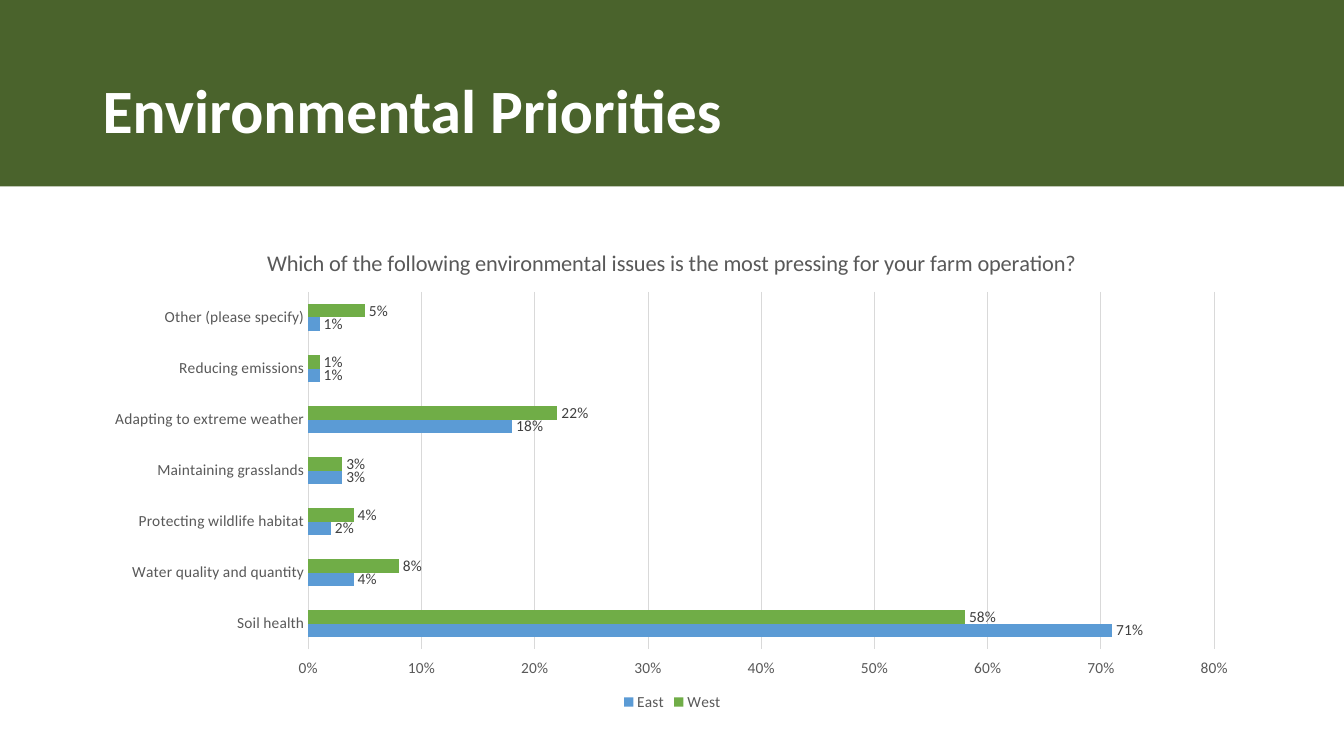
from dataclasses import dataclass

from lxml.etree import SubElement
from pptx import Presentation
from pptx.chart.data import CategoryChartData as ChartData
from pptx.dml.color import RGBColor
from pptx.enum.chart import (
    XL_CHART_TYPE as ChartType,
    XL_LABEL_POSITION as LabelPosition,
    XL_LEGEND_POSITION as LegendPosition,
    XL_TICK_LABEL_POSITION as TickLabelPosition,
    XL_TICK_MARK as TickMark,
)
from pptx.enum.shapes import MSO_SHAPE as Shape
from pptx.enum.text import MSO_ANCHOR as Anchor
from pptx.oxml.ns import qn
from pptx.util import Cm, Pt


@dataclass(frozen=True)
class Theme:
    font: str = "Calibri"
    banner: str = "4A632C"
    heading: str = "FFFFFF"
    muted: str = "595959"
    label: str = "404040"
    grid: str = "D9D9D9"
    west: str = "70AD47"
    east: str = "5B9BD5"
    heading_size: int = 44
    question_size: int = 16
    chart_size: int = 11


THEME = Theme()
SLIDE_WIDTH, SLIDE_HEIGHT = 33.87, 19.05
MARGIN, CONTENT_WIDTH = 2.34, 29.21

QUESTION = ("Which of the following environmental issues is the most "
            "pressing for your farm operation?")
# Issue: (West share, East share)
SHARES = {
    "Other (please specify)": (0.05, 0.01),
    "Reducing emissions": (0.01, 0.01),
    "Adapting to extreme weather": (0.22, 0.18),
    "Maintaining grasslands": (0.03, 0.03),
    "Protecting wildlife habitat": (0.04, 0.02),
    "Water quality and quantity": (0.08, 0.04),
    "Soil health": (0.58, 0.71),
}


def style_font(font, size, color, bold=False):
    font.name = THEME.font
    font.size = Pt(size)
    font.bold = bold
    font.color.rgb = RGBColor.from_string(color)


def write(frame, text, size, color, bold=False, line_spacing=None):
    para = frame.paragraphs[0]
    para.line_spacing = line_spacing
    span = para.add_run()
    span.text = text
    style_font(span.font, size, color, bold)


def style_line(line, color):
    line.color.rgb = RGBColor.from_string(color)
    line.width = Pt(0.75)


def place(element, **settings):
    """Give a chart part a manual layout, in fractions of the chart."""
    layout = element.find(qn("c:layout"))
    if layout is None:
        layout = SubElement(element, qn("c:layout"))
        # The layout follows the title text, or opens the plot area
        text = element.find(qn("c:tx"))
        element.insert(0 if text is None else 1, layout)
    manual = SubElement(layout, qn("c:manualLayout"))
    for name, value in settings.items():
        SubElement(manual, qn(f"c:{name}")).set("val", str(value))


class SlideBuilder:
    def __init__(self, deck, theme):
        self.theme = theme
        self.page = deck.slides.add_slide(deck.slide_layouts[6])

    def banner(self, height):
        band = self.page.shapes.add_shape(
            Shape.RECTANGLE, 0, 0, Cm(SLIDE_WIDTH), Cm(height))
        band.shadow.inherit = False
        band.fill.solid()
        band.fill.fore_color.rgb = RGBColor.from_string(self.theme.banner)
        band.line.fill.background()

    def heading(self, text, top, height):
        box = self.page.shapes.add_textbox(
            Cm(MARGIN), Cm(top), Cm(CONTENT_WIDTH), Cm(height))
        frame = box.text_frame
        frame.word_wrap = True
        frame.vertical_anchor = Anchor.MIDDLE
        write(frame, text, self.theme.heading_size, self.theme.heading,
              bold=True, line_spacing=0.9)

    def bar_chart(self, question, shares, top, height):
        theme = self.theme
        data = ChartData(number_format="0%")
        data.categories = list(shares)
        for name, values in zip(("West", "East"), zip(*shares.values())):
            data.add_series(name, values)
        chart = self.page.shapes.add_chart(
            ChartType.BAR_CLUSTERED, Cm(MARGIN), Cm(top),
            Cm(CONTENT_WIDTH), Cm(height), data).chart
        style_font(chart.font, theme.chart_size, theme.muted)

        # Question and legend
        chart.has_title = True
        write(chart.chart_title.text_frame, question,
              theme.question_size, theme.muted)
        chart.has_legend = True
        chart.legend.position = LegendPosition.BOTTOM
        chart.legend.include_in_layout = False
        style_font(chart.legend.font, theme.chart_size, theme.muted)

        # Axes: issues run downwards, so the percent labels sit at the far end
        issues, percent = chart.category_axis, chart.value_axis
        for axis in (issues, percent):
            axis.major_tick_mark = axis.minor_tick_mark = TickMark.NONE
            style_font(axis.tick_labels.font, theme.chart_size, theme.muted)
        issues.reverse_order = True
        style_line(issues.format.line, theme.grid)
        percent.tick_label_position = TickLabelPosition.HIGH
        percent.minimum_scale, percent.maximum_scale = 0, 0.8
        percent.major_unit = 0.1
        percent.tick_labels.number_format = "0%"
        percent.tick_labels.number_format_is_linked = False
        percent.format.line.fill.background()
        style_line(percent.major_gridlines.format.line, theme.grid)

        # Bars and their labels
        plot = chart.plots[0]
        plot.gap_width, plot.overlap = 182, 0
        plot.vary_by_categories = False
        for series, color in zip(plot.series, (theme.west, theme.east)):
            series.format.fill.solid()
            series.format.fill.fore_color.rgb = RGBColor.from_string(color)
            labels = series.data_labels
            labels.show_value = True
            labels.number_format = "0%"
            labels.number_format_is_linked = False
            labels.position = LabelPosition.OUTSIDE_END
            style_font(labels.font, theme.chart_size, theme.label)

        # Positions inside the chart
        title = chart.chart_title._element
        place(title, xMode="edge", yMode="edge",
              x=round(4.29 / CONTENT_WIDTH, 4), y=round(0.36 / height, 4))
        place(title.getparent().find(qn("c:plotArea")),
              layoutTarget="inner", xMode="edge", yMode="edge",
              x=round(5.43 / CONTENT_WIDTH, 4), y=round(1.57 / height, 4),
              w=round(22.83 / CONTENT_WIDTH, 4), h=round(9 / height, 4))


def main():
    deck = Presentation()
    deck.slide_width, deck.slide_height = Cm(SLIDE_WIDTH), Cm(SLIDE_HEIGHT)
    slide = SlideBuilder(deck, THEME)
    slide.banner(height=4.7)
    slide.heading("Environmental Priorities", top=1.02, height=3.68)
    slide.bar_chart(QUESTION, SHARES, top=5.79, height=12.24)
    deck.save("out.pptx")


if __name__ == "__main__":
    main()
